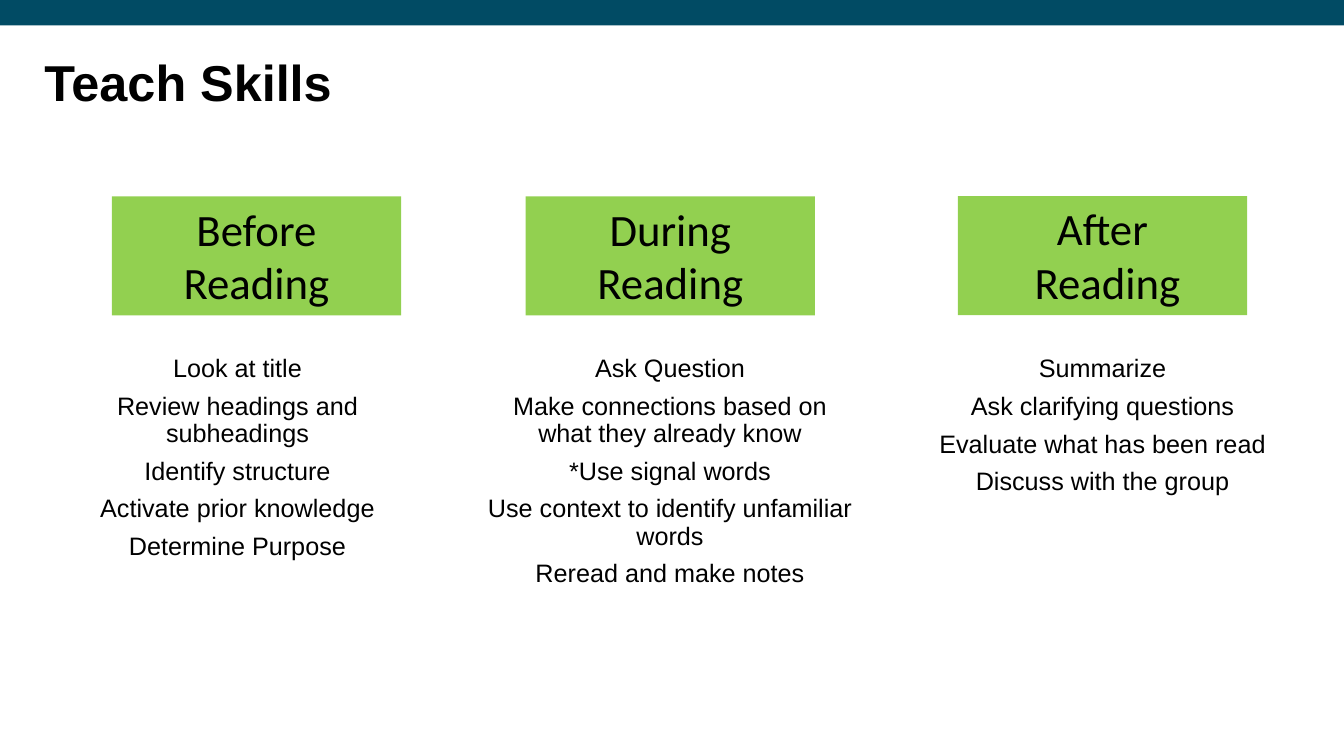
from pptx import Presentation
from pptx.dml.color import RGBColor
from pptx.enum import shapes, text
from pptx.util import Cm, Pt

TITLE = "Teach Skills"
# Heading paragraphs, heading left and top (cm), skills
STAGES = [
    (["Before Reading"], 2.82, 4.95, [
        "Look at title",
        "Review headings and subheadings",
        "Identify structure",
        "Activate prior knowledge",
        "Determine Purpose",
    ]),
    (["During Reading"], 13.25, 4.95, [
        "Ask Question",
        "Make connections based on what they already know",
        "*Use signal words",
        "Use context to identify unfamiliar words",
        "Reread and make notes",
    ]),
    (["After", " Reading"], 24.14, 4.94, [
        "Summarize",
        "Ask clarifying questions",
        "Evaluate what has been read",
        "Discuss with the group",
    ]),
]

TEAL = RGBColor(0x01, 0x4B, 0x64)
GREEN = RGBColor(0x92, 0xD0, 0x50)
BLACK = RGBColor(0, 0, 0)

SLIDE_WIDTH, SLIDE_HEIGHT = 33.87, 19.05
MARGIN = 1.12
LIST_TOP, LIST_WIDTH, LIST_HEIGHT = 8.84, 9.73, 7.49
LIST_STEP = 10.9
HEADING_WIDTH, HEADING_HEIGHT = 7.29, 3


def add_block(page, left, top, width, height, color):
    block = page.shapes.add_shape(shapes.MSO_SHAPE.RECTANGLE,
                                  Cm(left), Cm(top), Cm(width), Cm(height))
    block.shadow.inherit = False
    block.fill.solid()
    block.fill.fore_color.rgb = color
    block.line.fill.background()
    return block


def write(frame, lines, font_name, size, align, spacing=1.0, gap=0, bold=False):
    frame.word_wrap = True
    for index, line in enumerate(lines):
        para = frame.add_paragraph() if index else frame.paragraphs[0]
        para.text = line
        para.alignment = align
        para.line_spacing = spacing
        para.space_before = Pt(gap if index else 0)
        para.font.name = font_name
        para.font.size = Pt(size)
        para.font.bold = bold
        para.font.color.rgb = BLACK


deck = Presentation()
deck.slide_width, deck.slide_height = Cm(SLIDE_WIDTH), Cm(SLIDE_HEIGHT)
page = deck.slides.add_slide(deck.slide_layouts[5])

# Top band
add_block(page, 0, 0, SLIDE_WIDTH, 0.64, TEAL)

# Title
title = page.shapes.title
title.left, title.top = Cm(MARGIN), Cm(1.45)
title.width, title.height = Cm(31.52), Cm(3.23)
frame = title.text_frame
frame.margin_left = frame.margin_right = frame.margin_top = frame.margin_bottom = 0
frame.vertical_anchor = text.MSO_ANCHOR.TOP
frame.auto_size = text.MSO_AUTO_SIZE.NONE
write(frame, [TITLE], "Arial", 36, text.PP_ALIGN.LEFT, spacing=0.9, bold=True)

# One heading and one list of skills per reading stage
for column, (heading, left, top, skills) in enumerate(STAGES):
    skill_box = page.shapes.add_textbox(Cm(MARGIN + column * LIST_STEP), Cm(LIST_TOP),
                                        Cm(LIST_WIDTH), Cm(LIST_HEIGHT))
    write(skill_box.text_frame, skills, "Arial", 18, text.PP_ALIGN.CENTER,
          spacing=0.9, gap=7.5)

    block = add_block(page, left, top, HEADING_WIDTH, HEADING_HEIGHT, GREEN)
    block.text_frame.vertical_anchor = text.MSO_ANCHOR.TOP
    write(block.text_frame, heading, "Calibri", 32, text.PP_ALIGN.CENTER)

deck.save("out.pptx")
